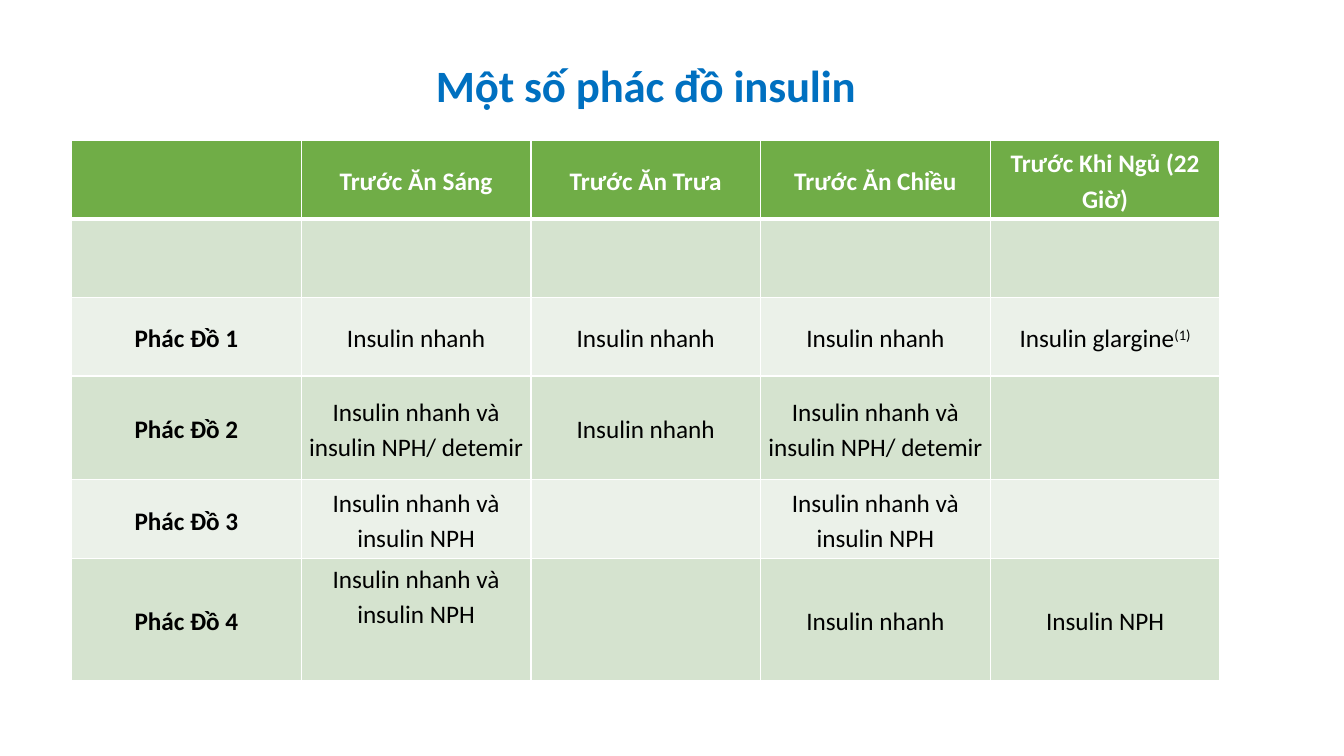
from lxml import etree
from pptx import Presentation
from pptx.dml.color import RGBColor
from pptx.enum import text
from pptx.oxml.ns import qn
from pptx.util import Inches, Pt

COLORS = {
    "white": "FFFFFF",
    "black": "000000",
    "title": "0070C0",
    "header": "70AD47",
    "band_dark": "D5E3CF",
    "band_light": "EBF1E9",
}
HEADERS = ["", "Trước Ăn Sáng", "Trước Ăn Trưa", "Trước Ăn Chiều", "Trước Khi Ngủ (22 Giờ)"]
FAST = "Insulin nhanh"
FAST_NPH = "Insulin nhanh và insulin NPH"
FAST_DETEMIR = "Insulin nhanh và insulin NPH/ detemir"
REGIMENS = [
    ["", "", "", "", ""],
    ["Phác Đồ 1", FAST, FAST, FAST, "Insulin glargine^(1)"],
    ["Phác Đồ 2", FAST_DETEMIR, FAST, FAST_DETEMIR, ""],
    ["Phác Đồ 3", FAST_NPH, "", FAST_NPH, ""],
    ["Phác Đồ 4", FAST_NPH, "", FAST, "Insulin NPH"],
]
ROW_HEIGHTS = [0.78, 0.78, 0.78, 1.03, 0.78, 1.21]


def color(name):
    return RGBColor.from_string(COLORS[name])


def set_font(paragraph, size, color_name, bold):
    font = paragraph.font
    font.name, font.size, font.bold = "Calibri", Pt(size), bold
    font.color.rgb = color(color_name)


def set_margins(target, left, top, right, bottom):
    target.margin_left, target.margin_top = Inches(left), Inches(top)
    target.margin_right, target.margin_bottom = Inches(right), Inches(bottom)


def add_border(cell, side, width):
    """Add a white line on one side (L, R, T or B); call before the fill is set."""
    line = etree.SubElement(cell._tc.get_or_add_tcPr(), qn(f"a:ln{side}"), w=str(Pt(width)))
    fill = etree.SubElement(line, qn("a:solidFill"))
    etree.SubElement(fill, qn("a:srgbClr"), val=COLORS["white"])


def write_cell(cell, content, color_name, bold):
    """Write centred text; whatever follows ^ is raised."""
    cell.vertical_anchor = text.MSO_ANCHOR.MIDDLE
    set_margins(cell, 0.01, 0.01, 0.01, 0.01)
    paragraph = cell.text_frame.paragraphs[0]
    paragraph.alignment = text.PP_ALIGN.CENTER
    paragraph.line_spacing = 1.15
    paragraph.space_after = Pt(10)
    set_font(paragraph, 18, color_name, bold)
    base, _, raised = content.partition("^")
    paragraph.add_run().text = base
    if raised:
        run = paragraph.add_run()
        run.text = raised
        run._r.get_or_add_rPr().set("baseline", "30000")


def add_title(slide, content):
    title = slide.shapes.title
    title.left, title.top = Inches(1.45), Inches(0.1)
    title.width, title.height = Inches(7.67), Inches(1.01)
    title.fill.solid()
    title.fill.fore_color.rgb = color("white")
    title.line.color.rgb = color("white")
    title.line.width = Pt(1)
    frame = title.text_frame
    frame.text = content
    frame.word_wrap = True
    frame.auto_size = text.MSO_AUTO_SIZE.SHAPE_TO_FIT_TEXT
    frame.vertical_anchor = text.MSO_ANCHOR.MIDDLE
    set_margins(frame, 0, 0.47, 0, 0)
    paragraph = frame.paragraphs[0]
    paragraph.alignment = text.PP_ALIGN.CENTER
    properties = paragraph._p.get_or_add_pPr()
    properties.set("marL", str(Inches(2.24)))
    properties.set("indent", "0")
    set_font(paragraph, 32, "title", True)
    paragraph.runs[0]._r.get_or_add_rPr().set("spc", "-10")


def add_regimen_table(slide):
    rows = [HEADERS] + REGIMENS
    table = slide.shapes.add_table(
        len(rows), len(HEADERS), Inches(0.71), Inches(1.39),
        Inches(11.39), Inches(sum(ROW_HEIGHTS))).table
    for row, height in zip(table.rows, ROW_HEIGHTS):
        row.height = Inches(height)
    for row_index, contents in enumerate(rows):
        is_header = row_index == 0
        band = "band_dark" if row_index % 2 else "band_light"
        for column_index, content in enumerate(contents):
            cell = table.cell(row_index, column_index)
            for side in "LRTB":
                thick = (row_index, side) in [(0, "B"), (1, "T")]
                add_border(cell, side, 3 if thick else 1)
            cell.fill.solid()
            cell.fill.fore_color.rgb = color("header" if is_header else band)
            if content:
                write_cell(cell, content, "white" if is_header else "black",
                           is_header or column_index == 0)
    table.cell(5, 1).vertical_anchor = text.MSO_ANCHOR.TOP


def main():
    presentation = Presentation()
    presentation.slide_width, presentation.slide_height = Inches(13.33), Inches(7.5)
    slide = presentation.slides.add_slide(presentation.slide_layouts[5])
    add_regimen_table(slide)
    add_title(slide, "Một số phác đồ insulin")
    presentation.save("out.pptx")


if __name__ == "__main__":
    main()
